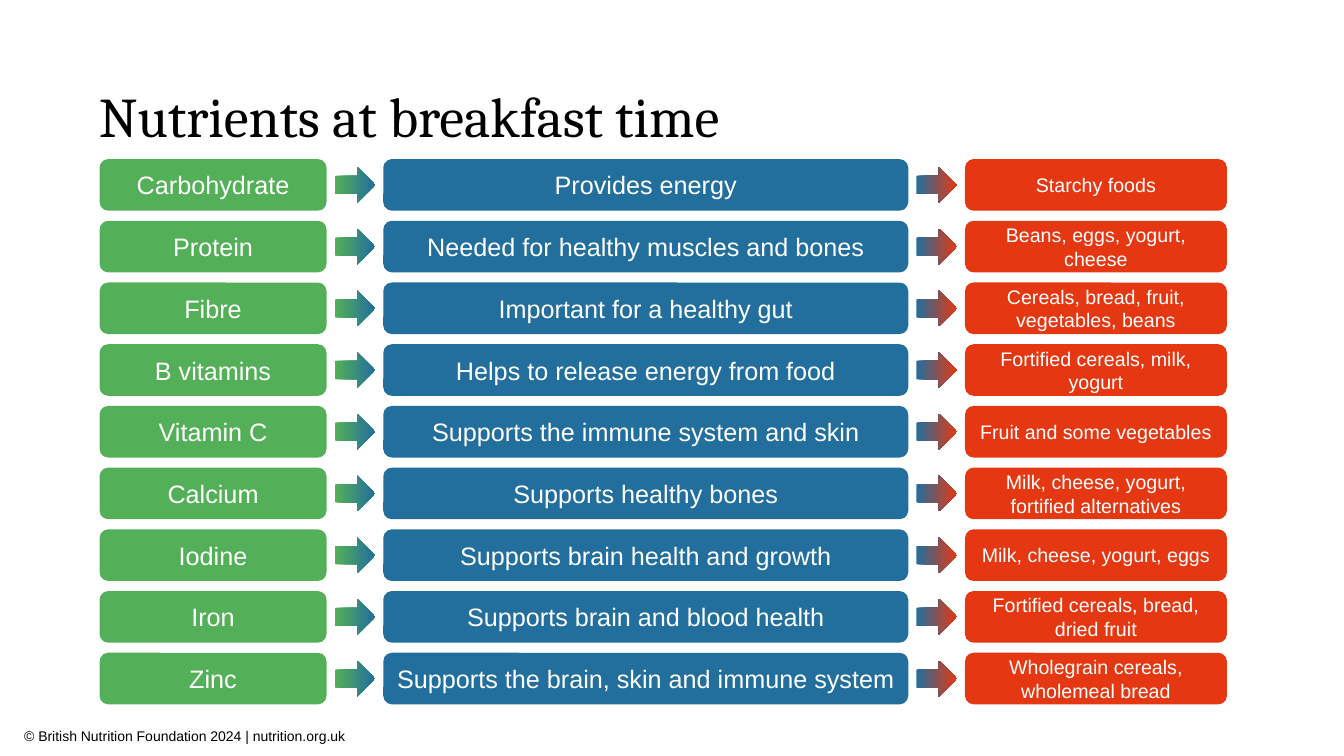
from pptx import Presentation
from pptx.dml.color import RGBColor
from pptx.enum.shapes import MSO_SHAPE as SHAPE
from pptx.enum.text import MSO_ANCHOR as ANCHOR, PP_ALIGN as ALIGN
from pptx.util import Cm, Pt

TITLE = "Nutrients at breakfast time"
FOOTER = "© British Nutrition Foundation 2024 | nutrition.org.uk"
ROWS = [
    ("Carbohydrate", "Provides energy", "Starchy foods"),
    ("Protein", "Needed for healthy muscles and bones", "Beans, eggs, yogurt, cheese"),
    ("Fibre", "Important for a healthy gut", "Cereals, bread, fruit, vegetables, beans"),
    ("B vitamins", "Helps to release energy from food", "Fortified cereals, milk, yogurt"),
    ("Vitamin C", "Supports the immune system and skin", "Fruit and some vegetables"),
    ("Calcium", "Supports healthy bones", "Milk, cheese, yogurt, fortified alternatives"),
    ("Iodine", "Supports brain health and growth", "Milk, cheese, yogurt, eggs"),
    ("Iron", "Supports brain and blood health", "Fortified cereals, bread, dried fruit"),
    ("Zinc", "Supports the brain, skin and immune system", "Wholegrain cereals, wholemeal bread"),
]

GREEN = RGBColor(0x53, 0xB0, 0x58)
BLUE = RGBColor(0x22, 0x6E, 0x9D)
RED = RGBColor(0xE5, 0x38, 0x12)
WHITE = RGBColor(0xFF, 0xFF, 0xFF)
BLACK = RGBColor(0, 0, 0)

COLUMNS = [(5.72, GREEN, 18), (13.23, BLUE, 18), (6.6, RED, 14)]
LEFT, GAP = 2.51, 1.43
FIRST_TOP, LAST_TOP, BOX_H = 4.01, 16.45, 1.3
ARROW_W, ARROW_H = 1.02, 0.91
PITCH = (LAST_TOP - FIRST_TOP) / (len(ROWS) - 1)


def write(sp, text, name, size, color, anchor, **formats):
    tf = sp.text_frame
    tf.word_wrap = True
    tf.vertical_anchor = anchor
    p = tf.paragraphs[0]
    for key, value in formats.items():
        setattr(p, key, value)
    r = p.add_run()
    r.text = text
    for key, value in {"name": name, "size": Pt(size)}.items():
        setattr(r.font, key, value)
    r.font.color.rgb = color


def add_plain(s, kind, x, y, w, h):
    sp = s.shapes.add_shape(kind, Cm(x), Cm(y), Cm(w), Cm(h))
    sp.shadow.inherit = False
    sp.line.fill.background()
    return sp


def add_box(s, x, y, w, color, text, size):
    sp = add_plain(s, SHAPE.ROUNDED_RECTANGLE, x, y, w, BOX_H)
    sp.fill.solid()
    sp.fill.fore_color.rgb = color
    write(sp, text, "Arial", size, WHITE, ANCHOR.MIDDLE, alignment=ALIGN.CENTER)


def add_arrow(s, gap_x, y, start, end):
    sp = add_plain(s, SHAPE.RIGHT_ARROW, gap_x + (GAP - ARROW_W) / 2,
                   y + (BOX_H - ARROW_H) / 2, ARROW_W, ARROW_H)
    sp.fill.gradient()
    sp.fill.gradient_angle = 0
    for stop, color in zip(sp.fill.gradient_stops, (start, end)):
        stop.color.rgb = color


def main():
    prs = Presentation()
    prs.slide_width, prs.slide_height = Cm(33.87), Cm(19.05)
    s = prs.slides.add_slide(prs.slide_layouts[6])

    footer = s.shapes.add_textbox(Cm(0.36), Cm(18.21), Cm(9.7), Cm(0.68))
    write(footer, FOOTER, "Arial", 10, BLACK, ANCHOR.TOP)
    title = s.shapes.add_textbox(Cm(2.24), Cm(1.96), Cm(29.41), Cm(1.93))
    write(title, TITLE, "Cambria", 40, BLACK, ANCHOR.BOTTOM, line_spacing=0.9)

    for i, row in enumerate(ROWS):
        x, y = LEFT, FIRST_TOP + i * PITCH
        for j, (text, (w, color, size)) in enumerate(zip(row, COLUMNS)):
            if j:
                add_arrow(s, x - GAP, y, COLUMNS[j - 1][1], color)
            add_box(s, x, y, w, color, text, size)
            x += w + GAP

    prs.save("out.pptx")


if __name__ == "__main__":
    main()
